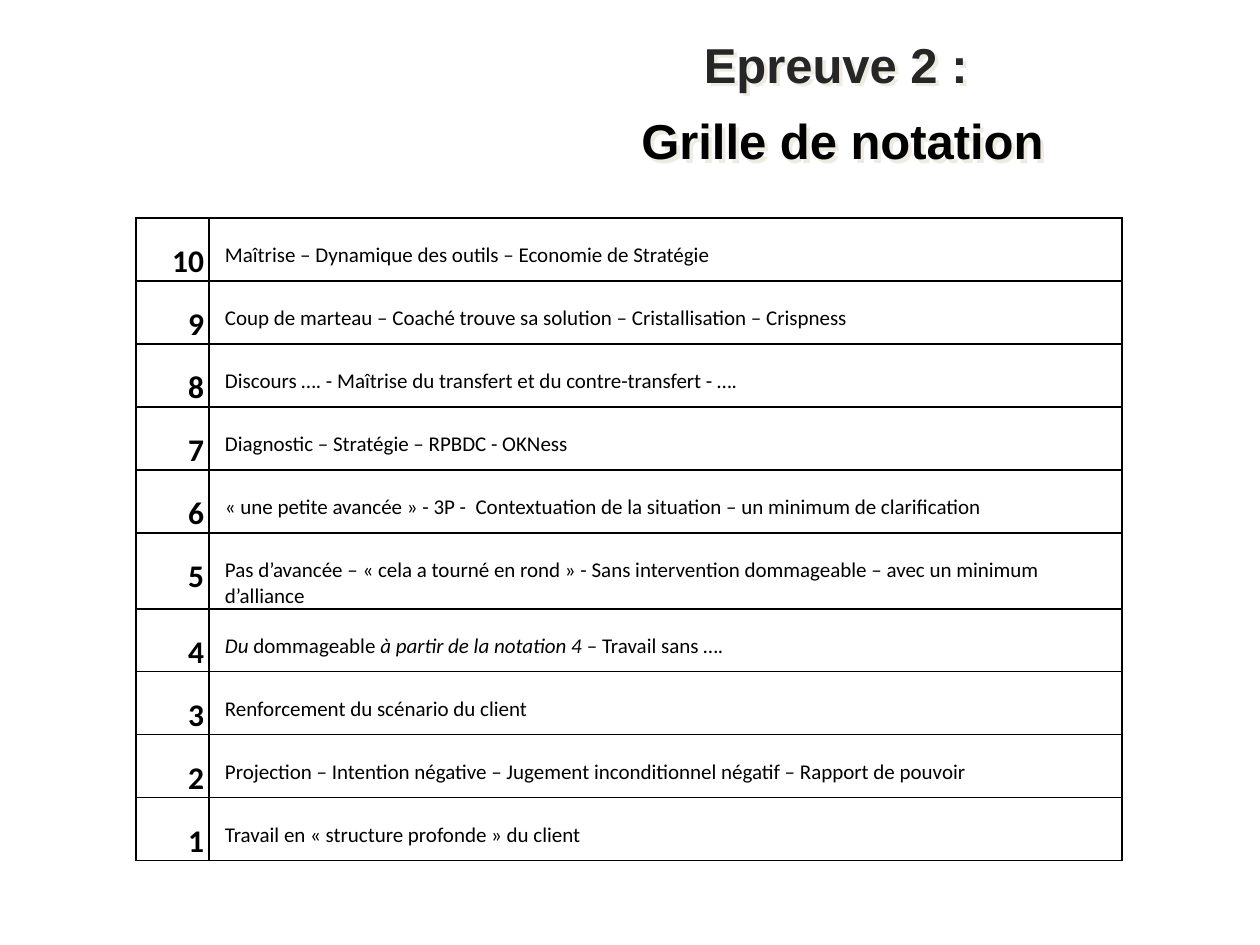
from lxml import etree
from pptx import Presentation
from pptx.dml.color import RGBColor
from pptx.enum.text import MSO_ANCHOR, PP_ALIGN
from pptx.oxml import parse_xml
from pptx.oxml.ns import nsdecls, qn
from pptx.util import Pt

PX = 914400 // 126
BLACK = RGBColor(0, 0, 0)
DARK = RGBColor(0x26, 0x26, 0x26)
SHADE = RGBColor(0xEE, 0xEC, 0xE1)
LEFT, RIGHT, CENTER = PP_ALIGN.LEFT, PP_ALIGN.RIGHT, PP_ALIGN.CENTER
TOP, MIDDLE = MSO_ANCHOR.TOP, MSO_ANCHOR.MIDDLE

# Each grade: its mark, then its text as runs (text, italic)
GRADES = [
    ("10", [("Maîtrise – Dynamique des outils – Economie de Stratégie", False)]),
    ("9", [("Coup de marteau – Coaché trouve sa solution – Cristallisation – Crispness", False)]),
    ("8", [("Discours …. - Maîtrise du transfert et du contre-transfert - ….", False)]),
    ("7", [("Diagnostic – Stratégie – RPBDC - OKNess", False)]),
    ("6", [("« une petite avancée » - 3P -  Contextuation de la situation – un minimum de clarification", False)]),
    ("5", [("Pas d’avancée – « cela a tourné en rond » - Sans intervention dommageable – "
            "avec un minimum d’alliance", False)]),
    ("4", [("Du ", True), ("dommageable", False),
           (" à partir de la notation 4 ", True), ("– Travail sans ….", False)]),
    ("3", [("Renforcement du scénario du client", False)]),
    ("2", [("Projection – Intention négative – Jugement inconditionnel négatif – Rapport de pouvoir", False)]),
    ("1", [("Travail en « structure profonde » du client", False)]),
]
ROW, TALL = 63, 76


def write(para, text, size=12, font="Calibri", color=BLACK, bold=False,
          italic=False, align=LEFT):
    para.alignment = align
    run = para.add_run()
    run.text = text
    run.font.size = Pt(size)
    run.font.name = font
    run.font.color.rgb = color
    run.font.bold = bold
    run.font.italic = italic


def border(cell):
    props = cell._tc.get_or_add_tcPr()
    for side in ("lnL", "lnR", "lnT", "lnB"):
        line = etree.SubElement(props, qn("a:" + side), w=str(Pt(1)))
        fill = etree.SubElement(line, qn("a:solidFill"))
        etree.SubElement(fill, qn("a:srgbClr"), val=str(BLACK))


deck = Presentation()
deck.slide_width, deck.slide_height = 1260 * PX, 945 * PX
slide = deck.slides.add_slide(deck.slide_layouts[6])

# Title with a pale shadow behind the letters
title = slide.shapes.add_textbox(442 * PX, 24 * PX, 801 * PX, 156 * PX)
frame = title.text_frame
frame.word_wrap = True
frame.vertical_anchor = MIDDLE
write(frame.paragraphs[0], "Epreuve 2 : ", size=28, font="Arial", color=DARK,
      bold=True, align=CENTER)
second = frame.add_paragraph()
second.space_before = Pt(10)
write(second, "Grille de notation", size=28, font="Arial", bold=True, align=CENTER)
title._element.spPr.append(parse_xml(
    f'<a:effectLst {nsdecls("a")}><a:outerShdw dist="35921" dir="2700000" algn="ctr">'
    f'<a:srgbClr val="{SHADE}"/></a:outerShdw></a:effectLst>'))

# Grading table
high = ROW * (len(GRADES) - 1) + TALL
table = slide.shapes.add_table(len(GRADES), 2, 136 * PX, 218 * PX,
                               986 * PX, high * PX).table
table.first_row = table.horz_banding = False
table.columns[0].width = 73 * PX
table.columns[1].width = 913 * PX

for row, (mark, runs) in zip(table.rows, GRADES):
    row.height = (TALL if mark == "5" else ROW) * PX
    for cell, left in zip(row.cells, (5, 16)):
        border(cell)
        cell.fill.background()
        cell.vertical_anchor = TOP
        cell.margin_left, cell.margin_right = left * PX, 5 * PX
        cell.margin_top, cell.margin_bottom = 25 * PX, 0
    grade, note = (cell.text_frame.paragraphs[0] for cell in row.cells)
    write(grade, mark, size=18, bold=True, align=RIGHT)
    for text, slant in runs:
        write(note, text, italic=slant)

deck.save("out.pptx")
